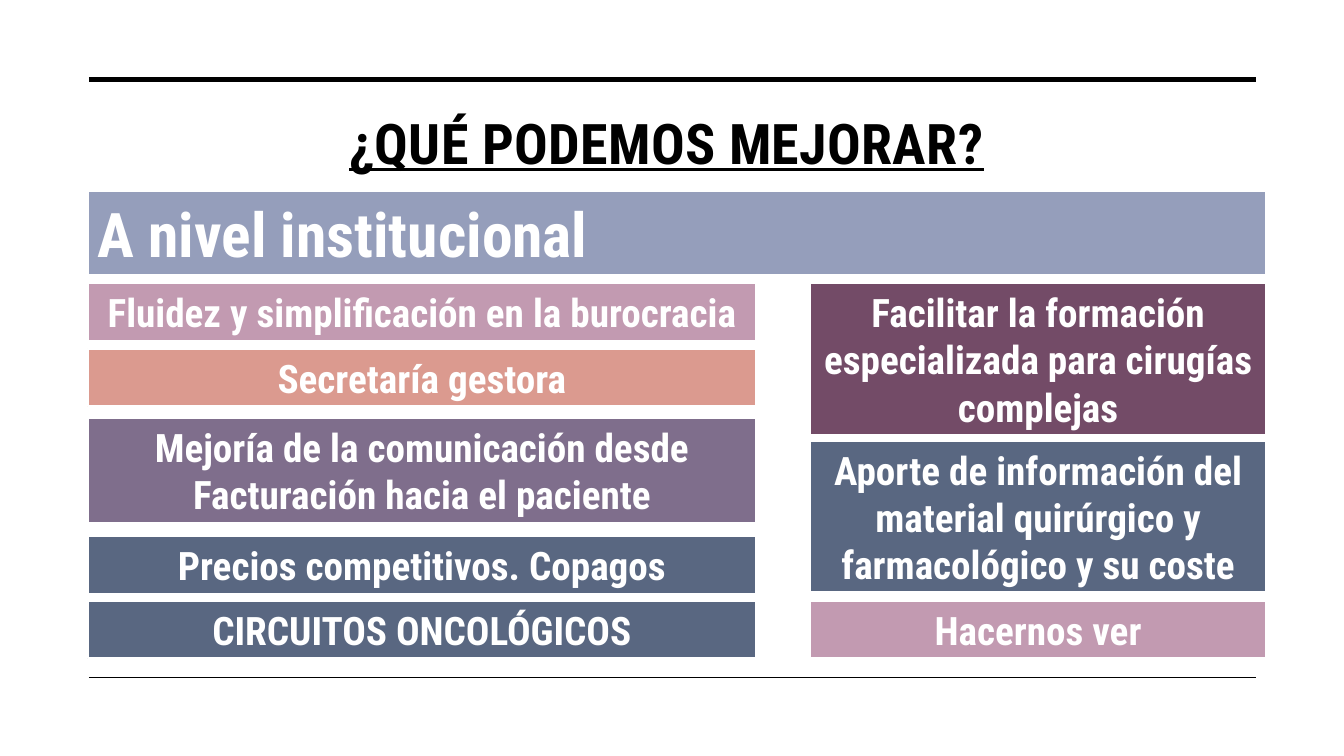
from dataclasses import dataclass

from lxml.etree import SubElement
from pptx import Presentation
from pptx.dml.color import RGBColor
from pptx.enum.shapes import MSO_CONNECTOR as CONNECTOR, MSO_SHAPE as SHAPE
from pptx.enum.text import MSO_ANCHOR as ANCHOR, MSO_AUTO_SIZE as AUTO_SIZE, PP_ALIGN as ALIGN
from pptx.oxml.ns import qn
from pptx.util import Cm, Pt


@dataclass(frozen=True)
class Theme:
    """Colours, font and type sizes of the slide."""
    font: str = "Roboto Condensed"
    title_size: int = 40
    header_size: int = 44
    body_size: int = 28
    black: str = "000000"
    white: str = "FFFFFF"
    lavender: str = "959EBB"
    pink: str = "C29AB1"
    salmon: str = "DB9A8F"
    purple: str = "7F6E8C"
    slate: str = "596781"
    plum: str = "734B67"


THEME = Theme()
LEFT, WIDTH = 2.21, 29.69
LEFT_WIDTH, RIGHT_WIDTH = 16.84, 11.48
HEADER_TOP, COLUMNS_TOP = 4.8, 7.14
PADDING, LINE_HEIGHT = 0.26, 1.19

LEFT_BARS = [
    (0, 1, THEME.pink, "Fluidez y simplificación en la burocracia"),
    (1.65, 1, THEME.salmon, "Secretaría gestora"),
    (3.4, 2, THEME.purple, "Mejoría de la comunicación desde Facturación hacia el paciente"),
    (6.37, 1, THEME.slate, "Precios competitivos. Copagos"),
    (8, 1, THEME.slate, "CIRCUITOS ONCOLÓGICOS"),
]
RIGHT_BARS = [
    (0, 3, THEME.plum, "Facilitar la formación especializada para cirugías complejas"),
    (3.96, 3, THEME.slate,
     "Aporte de información del material quirúrgico y farmacológico y su coste"),
    (8, 1, THEME.pink, "Hacernos ver"),
]


def write(tf, text, size=THEME.body_size, color=THEME.white, align=ALIGN.CENTER,
          underline=False, spacing=None):
    """Write one bold paragraph into a text frame."""
    tf.word_wrap = True
    tf.vertical_anchor = ANCHOR.MIDDLE
    p = tf.paragraphs[0]
    p.alignment = align
    r = p.add_run()
    r.text = text
    font = r.font
    font.name, font.size, font.bold = THEME.font, Pt(size), True
    font.underline = underline
    font.color.rgb = RGBColor.from_string(color)
    if spacing is not None:
        r._r.get_or_add_rPr().set("spc", str(round(spacing * 100)))


def add_rule(slide, left, top, width, weight):
    """Draw a horizontal black rule."""
    line = slide.shapes.add_connector(
        CONNECTOR.STRAIGHT, Cm(left), Cm(top), Cm(left + width), Cm(top))
    line.line.color.rgb = RGBColor.from_string(THEME.black)
    line.line.width = Pt(weight)
    SubElement(line._element.spPr, qn("a:effectLst"))


def add_title(slide, left, top, width, height):
    """Place and format the title placeholder."""
    sp = slide.shapes.title
    sp.left, sp.top, sp.width, sp.height = Cm(left), Cm(top), Cm(width), Cm(height)
    sp.text_frame.auto_size = AUTO_SIZE.NONE
    write(sp.text_frame, "¿QUÉ PODEMOS MEJORAR?", size=THEME.title_size,
          color=THEME.black, underline=True, spacing=0.3)


def add_bar(slide, left, top, width, height, fill, text, **style):
    """Draw a filled bar with a white outline and its text."""
    sp = slide.shapes.add_shape(SHAPE.RECTANGLE, Cm(left), Cm(top), Cm(width), Cm(height))
    sp.shadow.inherit = False
    sp.fill.solid()
    sp.fill.fore_color.rgb = RGBColor.from_string(fill)
    sp.line.color.rgb = RGBColor.from_string(THEME.white)
    sp.line.width = Pt(1.5)
    sp.text_frame.auto_size = AUTO_SIZE.SHAPE_TO_FIT_TEXT
    write(sp.text_frame, text, **style)


def add_column(slide, left, top, width, bars):
    """Stack bars whose heights follow their number of text lines."""
    for offset, lines, fill, text in bars:
        add_bar(slide, left, top + offset, width, PADDING + lines * LINE_HEIGHT, fill, text)


def main():
    """Build and save the slide."""
    prs = Presentation()
    prs.slide_width, prs.slide_height = Cm(33.87), Cm(19.05)
    slide = prs.slides.add_slide(prs.slide_layouts[5])
    add_rule(slide, 2.24, 2.01, 29.41, 3.5)
    add_rule(slide, 2.24, 17.07, 29.41, 1)
    add_title(slide, 1.96, 2.54, WIDTH, 2.06)
    add_bar(slide, LEFT, HEADER_TOP, WIDTH, 2.13, THEME.lavender, "A nivel institucional",
            size=THEME.header_size, align=ALIGN.LEFT)
    add_column(slide, LEFT, COLUMNS_TOP, LEFT_WIDTH, LEFT_BARS)
    add_column(slide, LEFT + WIDTH - RIGHT_WIDTH, COLUMNS_TOP, RIGHT_WIDTH, RIGHT_BARS)
    prs.save("out.pptx")


if __name__ == "__main__":
    main()
